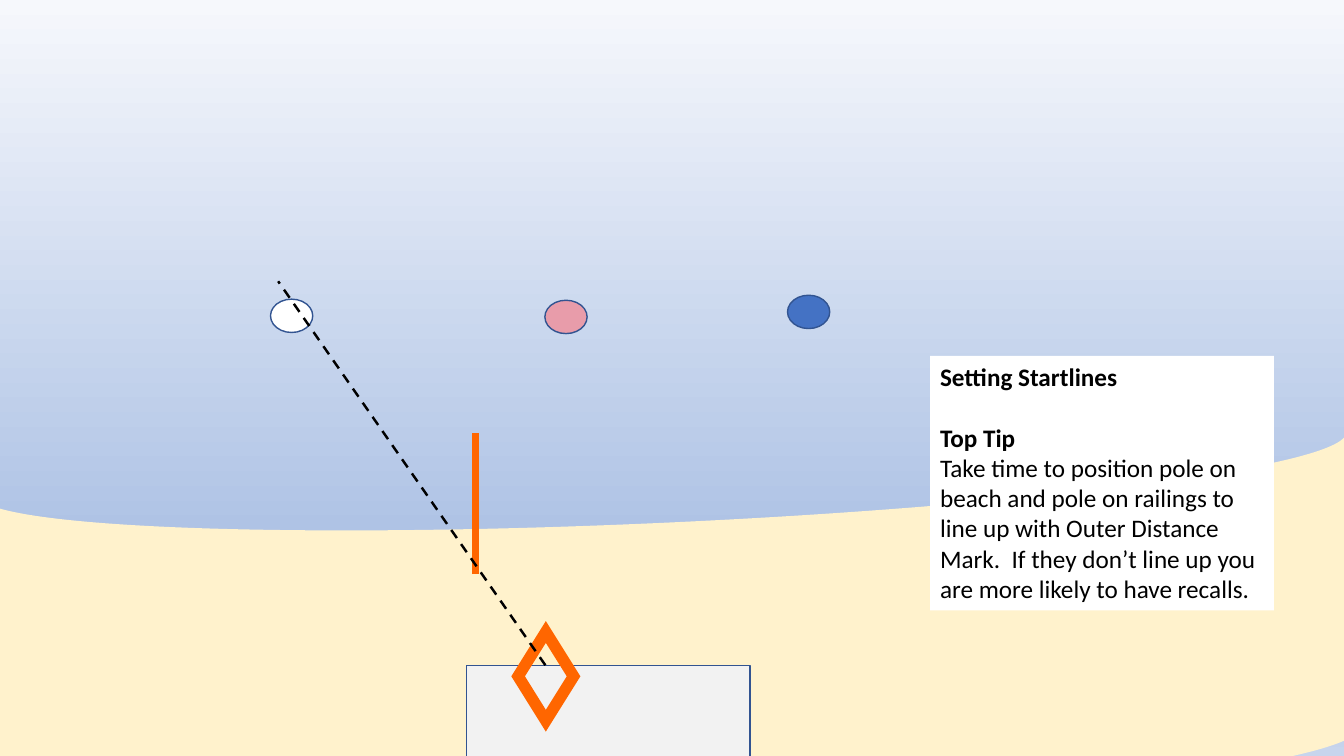
import copy

import pptx
import pptx.dml.color
import pptx.enum.dml
import pptx.enum.shapes
import pptx.enum.text
import pptx.oxml.ns
import pptx.oxml.xmlchemy
import pptx.util

Pt = pptx.util.Pt
RGBColor = pptx.dml.color.RGBColor
SHAPE = pptx.enum.shapes.MSO_SHAPE

SAND = RGBColor(0xFF, 0xF2, 0xCC)
PLATFORM_GREY = RGBColor(0xF2, 0xF2, 0xF2)
OUTLINE_BLUE = RGBColor(0x32, 0x54, 0x91)
ORANGE = RGBColor(0xFF, 0x66, 0x00)
BLUE = RGBColor(0x44, 0x72, 0xC4)
PINK = RGBColor(0xE8, 0x9C, 0xAA)
WHITE = RGBColor(0xFF, 0xFF, 0xFF)
BLACK = RGBColor(0x00, 0x00, 0x00)
SEA_STOPS = [
    (0, RGBColor(0xF6, 0xF8, 0xFC)),
    (0.74, RGBColor(0xAB, 0xC0, 0xE4)),
    (0.83, RGBColor(0xAB, 0xC0, 0xE4)),
    (1, RGBColor(0xC7, 0xD5, 0xED)),
]

TIP_PARAGRAPHS = [
    ("Setting Startlines", True, 0),
    ("Top Tip", True, 22),
    (
        "Take time to position pole on beach and pole on railings to line up "
        "with Outer Distance Mark.  If they don’t line up you are more likely "
        "to have recalls.",
        False,
        0,
    ),
]


def add_plain_shape(slide, kind, box, fill=None, line=None, line_width=1):
    shape = slide.shapes.add_shape(kind, *(Pt(length) for length in box))
    shape.shadow.inherit = False
    if fill is None:
        shape.fill.background()
    else:
        shape.fill.solid()
        shape.fill.fore_color.rgb = fill
    if line is None:
        shape.line.fill.background()
    else:
        shape.line.color.rgb = line
        shape.line.width = Pt(line_width)
    return shape


def add_straight_line(slide, start, end, color, width):
    connector = slide.shapes.add_connector(
        pptx.enum.shapes.MSO_CONNECTOR.STRAIGHT,
        *(Pt(length) for length in (*start, *end)),
    )
    connector.line.color.rgb = color
    connector.line.width = Pt(width)
    properties = connector._element.spPr
    properties.append(pptx.oxml.xmlchemy.OxmlElement("a:effectLst"))
    return connector


def paint_sea(slide):
    fill = slide.background.fill
    fill.gradient()
    fill.gradient_angle = 270
    stop_list = slide._element.find(".//" + pptx.oxml.ns.qn("a:gsLst"))
    for _ in range(len(SEA_STOPS) - len(stop_list)):
        stop_list.append(copy.deepcopy(stop_list[0]))
    for stop, (position, color) in zip(fill.gradient_stops, SEA_STOPS):
        stop.position = position
        stop.color.rgb = color


def add_beach(slide, box):
    beach = add_plain_shape(slide, SHAPE.FLOWCHART_STORED_DATA, box, SAND)
    beach.rotation = 267.4


def add_race_platform(slide, left, top):
    add_plain_shape(
        slide, SHAPE.RECTANGLE, (left, top, 202.3, 111.6), PLATFORM_GREY, OUTLINE_BLUE
    )
    marker = add_plain_shape(
        slide, SHAPE.DIAMOND, (left + 36.7, top - 23.8, 39.6, 63.4), None, ORANGE, 8.25
    )
    outline = marker._element.spPr.find(pptx.oxml.ns.qn("a:ln"))
    miter = pptx.oxml.xmlchemy.OxmlElement("a:miter")
    miter.set("lim", "800000")
    outline.append(miter)


def add_buoys(slide, left, top):
    buoys = [(369.3, 0, BLUE), (196, 3.6, PINK), (0, 2.8, WHITE)]
    for offset_left, offset_top, color in buoys:
        box = (left + offset_left, top + offset_top, 30.2, 23.8)
        add_plain_shape(slide, SHAPE.OVAL, box, color, OUTLINE_BLUE)


def add_tip(slide, box):
    text_box = slide.shapes.add_textbox(*(Pt(length) for length in box))
    text_box.fill.solid()
    text_box.fill.fore_color.rgb = WHITE
    text_frame = text_box.text_frame
    text_frame.word_wrap = True
    text_frame.auto_size = pptx.enum.text.MSO_AUTO_SIZE.SHAPE_TO_FIT_TEXT
    text_frame.text = "\n".join(text for text, _, _ in TIP_PARAGRAPHS)
    for paragraph, (_, bold, space) in zip(text_frame.paragraphs, TIP_PARAGRAPHS):
        paragraph.space_before = Pt(space)
        font = paragraph.runs[0].font
        font.name = "Calibri"
        font.size = Pt(18)
        font.bold = bold
        font.color.rgb = BLACK


def build_startline_slide(presentation):
    slide = presentation.slides.add_slide(presentation.slide_layouts[6])
    paint_sea(slide)
    add_beach(slide, (352.1, -31.7, 252.7, 978.5))
    add_race_platform(slide, 333.4, 475.2)
    add_straight_line(slide, (339.8, 410.1), (339.8, 309.4), ORANGE, 5.25)
    add_buoys(slide, 193.2, 210.9)
    sight_line = add_straight_line(slide, (389.6, 475.2), (198.7, 200.9), BLACK, 1.75)
    sight_line.line.dash_style = pptx.enum.dml.MSO_LINE.DASH
    add_tip(slide, (664.4, 254.2, 245.5, 181.8))


def main():
    presentation = pptx.Presentation()
    presentation.slide_width = Pt(960)
    presentation.slide_height = Pt(540)
    build_startline_slide(presentation)
    presentation.save("out.pptx")


if __name__ == "__main__":
    main()
